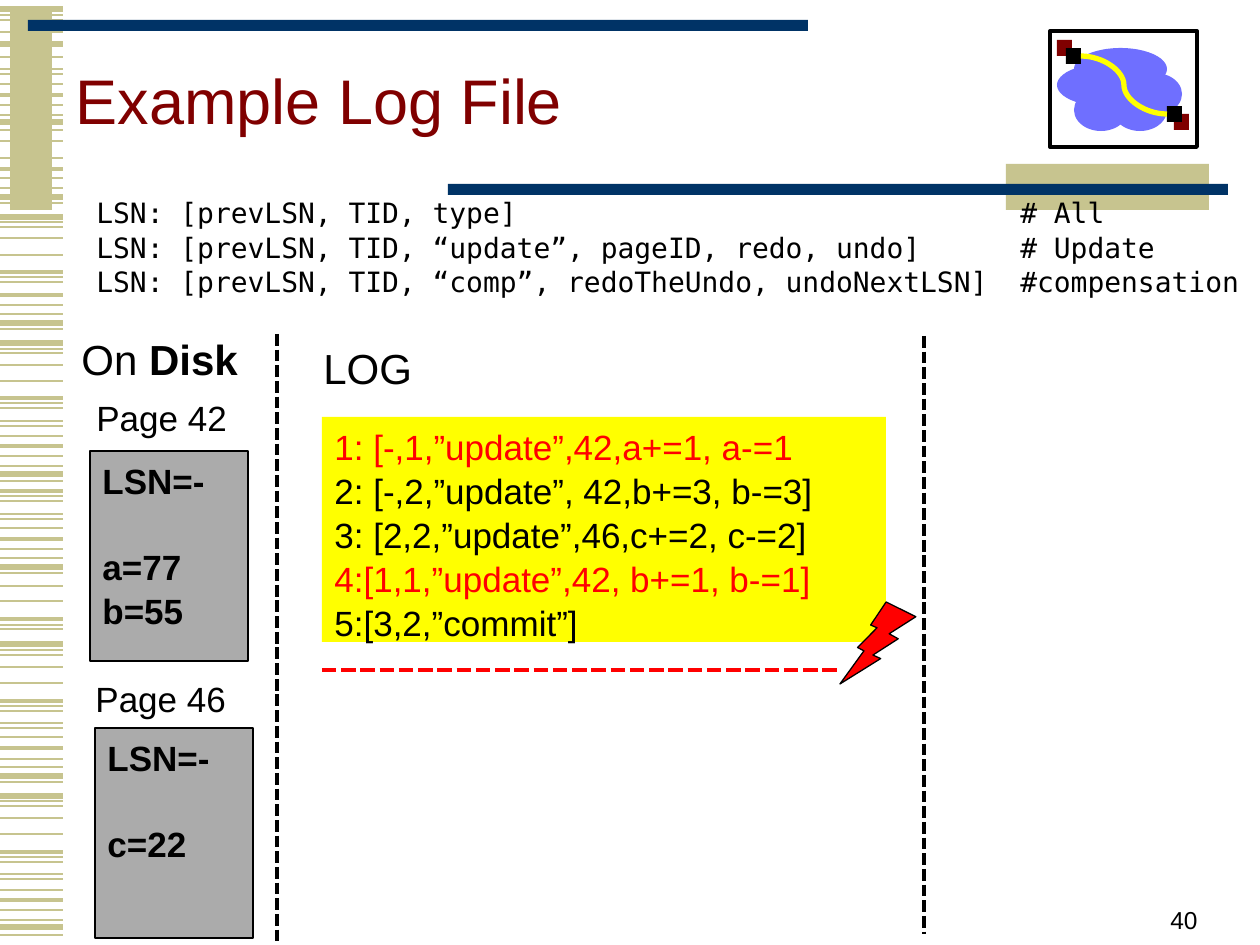
from lxml import etree
from pptx import Presentation, util as u
from pptx.dml.color import RGBColor
from pptx.enum import dml, shapes, text
from pptx.oxml.ns import qn

SCALE = 914400 // 126
SANS, MONO = "Arial", "DejaVu Sans Mono"
COLORS = {
    "khaki": "C7C48F", "navy": "003366", "maroon": "800000", "black": "000000",
    "white": "FFFFFF", "cloud": "6F6FFF", "yellow": "FFFF00", "red": "FF0000",
    "gray": "ABABAB",
}
STRIPES = {
    3: [9, 44, 122, 197, 217, 323, 343, 474, 567, 644, 776, 796, 927],
    2.25: [95, 169, 272, 295, 398, 446, 491, 539, 619, 701, 748, 852, 900],
    1.5: [57, 74, 105, 130, 178, 203, 282, 305, 329, 408, 426, 456, 481, 501,
          519, 549, 573, 629, 711, 728, 759, 782, 862, 879, 910, 935],
    1: [20, 32, 84, 141, 158, 227, 238, 255, 353, 365, 381, 436, 528, 586,
        601, 655, 667, 683, 737, 806, 818, 834, 890],
    0.75: [15, 69, 115, 188, 222, 277, 314, 349, 403, 421, 466, 496, 514, 558,
           625, 650, 706, 723, 767, 801, 857, 874, 920],
}
CLOUD_PUFFS = [
    (1057, 64, 93, 42), (1074, 48, 93, 42), (1074, 89, 54, 42),
    (1113, 89, 54, 42), (1113, 73, 54, 42), (1128, 73, 54, 42),
]
LOG_ENTRIES = [
    ("1: [-,1,”update”,42,a+=1, a-=1", "red"),
    ("2: [-,2,”update”, 42,b+=3, b-=3]", "black"),
    ("3: [2,2,”update”,46,c+=2, c-=2]", "black"),
    ("4:[1,1,”update”,42, b+=1, b-=1]", "red"),
    ("5:[3,2,”commit”]", "black"),
]
RECORD_FORMATS = [
    "LSN: [prevLSN, TID, type]\t# All",
    "LSN: [prevLSN, TID, “update”, pageID, redo, undo]\t# Update",
    "LSN: [prevLSN, TID, “comp”, redoTheUndo, undoNextLSN]\t#compensation",
]


def px(*lengths):
    return [length * SCALE for length in lengths]


def rgb(name):
    return RGBColor.from_string(COLORS[name])


def add_block(slide, box, fill, line=None, weight=0.75, kind=shapes.MSO_SHAPE.RECTANGLE):
    shape = slide.shapes.add_shape(kind, *px(*box))
    shape.shadow.inherit = False
    shape.fill.solid()
    shape.fill.fore_color.rgb = rgb(fill)
    if line:
        shape.line.color.rgb = rgb(line)
        shape.line.width = u.Pt(weight)
    else:
        shape.line.fill.background()
    return shape


def add_line(slide, ends, color, weight, dashed=False, kind=shapes.MSO_CONNECTOR.STRAIGHT):
    connector = slide.shapes.add_connector(kind, *px(*ends))
    connector.line.color.rgb = rgb(color)
    connector.line.width = u.Pt(weight)
    if dashed:
        connector.line.dash_style = dml.MSO_LINE.SQUARE_DOT
    etree.SubElement(connector._element.spPr, qn("a:effectLst"))


def write(shape, lines, size, color="black", font=SANS, bold=False, spacing=1.05, wrap=True):
    frame = shape.text_frame
    frame.word_wrap = wrap
    frame.vertical_anchor = text.MSO_ANCHOR.TOP
    for index, line in enumerate(lines):
        paragraph = frame.paragraphs[0] if index == 0 else frame.add_paragraph()
        paragraph.text = line
        paragraph.alignment = text.PP_ALIGN.LEFT
        paragraph.line_spacing = spacing
        paragraph.font.name = font
        paragraph.font.size = u.Pt(size)
        paragraph.font.bold = bold
        paragraph.font.color.rgb = rgb(color)
    return frame


def add_label(slide, box, lines, size, **style):
    return write(slide.shapes.add_textbox(*px(*box)), lines, size, **style)


def add_tab_stop(paragraph, position):
    properties = paragraph._p.get_or_add_pPr()
    stops = etree.SubElement(properties, qn("a:tabLst"))
    etree.SubElement(stops, qn("a:tab"), pos=str(position * SCALE), algn="l")
    defaults = properties.find(qn("a:defRPr"))
    if defaults is not None:
        defaults.addprevious(stops)


def add_backdrop(slide):
    for weight, heights in STRIPES.items():
        for y in heights:
            add_line(slide, (0, y, 63, y), "khaki", weight)
    add_block(slide, (10, 10, 42, 200), "khaki")
    add_block(slide, (28, 20, 780, 11), "navy")
    add_block(slide, (1006, 164, 203, 46), "khaki")
    add_block(slide, (448, 184, 780, 11), "navy")


def add_network_emblem(slide):
    add_block(slide, (1050, 31, 147, 116), "white", "black", 2.25)
    add_block(slide, (1174, 114, 15, 16), "maroon")
    for puff in CLOUD_PUFFS:
        add_block(slide, puff, "cloud", kind=shapes.MSO_SHAPE.OVAL)
    add_block(slide, (1057, 40, 15, 16), "maroon")
    add_block(slide, (1066, 48, 15, 16), "black")
    add_block(slide, (1167, 106, 15, 16), "black")
    add_line(slide, (1081, 56, 1167, 114), "yellow", 3, kind=shapes.MSO_CONNECTOR.CURVE)


def set_title(slide, title):
    shape = slide.shapes.title
    shape.left, shape.top, shape.width, shape.height = px(63, 21, 987, 168)
    frame = write(shape, [title], 36, "maroon", spacing=0.85)
    frame.vertical_anchor = text.MSO_ANCHOR.MIDDLE


def add_page(slide, label, label_at, box_at, values):
    add_label(slide, (*label_at, 157, 55), [label], 20, wrap=False)
    page = add_block(slide, (*box_at, 158, 210), "gray", "black")
    frame = write(page, ["LSN=-", *values], 20, bold=True)
    frame.paragraphs[0].space_after = u.Pt(24)


def add_log(slide):
    add_label(slide, (311, 334, 115, 64), ["LOG"], 24, wrap=False)
    log = add_block(slide, (322, 417, 564, 225), "yellow")
    frame = write(log, [entry for entry, _ in LOG_ENTRIES], 20)
    for paragraph, (_, color) in zip(frame.paragraphs, LOG_ENTRIES):
        paragraph.font.color.rgb = rgb(color)


def main():
    presentation = Presentation()
    presentation.slide_width, presentation.slide_height = u.Inches(10), u.Inches(7.5)
    slide = presentation.slides.add_slide(presentation.slide_layouts[5])
    add_backdrop(slide)
    add_network_emblem(slide)
    set_title(slide, "Example Log File")

    number = add_label(slide, (908, 878, 302, 63), ["40"], 14)
    number.vertical_anchor = text.MSO_ANCHOR.BOTTOM
    number.paragraphs[0].alignment = text.PP_ALIGN.RIGHT

    formats = add_label(slide, (84, 189, 1182, 115), RECORD_FORMATS, 16, font=MONO, spacing=1.02)
    for paragraph in formats.paragraphs:
        add_tab_stop(paragraph, 924)

    disk = add_label(slide, (69, 325, 184, 63), ["On "], 24, wrap=False)
    run = disk.paragraphs[0].add_run()
    run.text = "Disk"
    run.font.bold = True
    add_page(slide, "Page 42", (84, 388), (90, 451), ["a=77", "b=55"])
    add_page(slide, "Page 46", (83, 669), (95, 728), ["c=22"])

    add_log(slide)
    add_line(slide, (277, 334, 277, 944), "black", 2.25, dashed=True)
    add_line(slide, (924, 336, 924, 934), "black", 2.25, dashed=True)
    add_line(slide, (322, 670, 837, 670), "red", 2.75, dashed=True)
    bolt = add_block(slide, (840, 602, 76, 82), "red", "black",
                     kind=shapes.MSO_SHAPE.LIGHTNING_BOLT)
    bolt._element.spPr.find(qn("a:xfrm")).set("flipH", "1")
    presentation.save("out.pptx")


if __name__ == "__main__":
    main()
